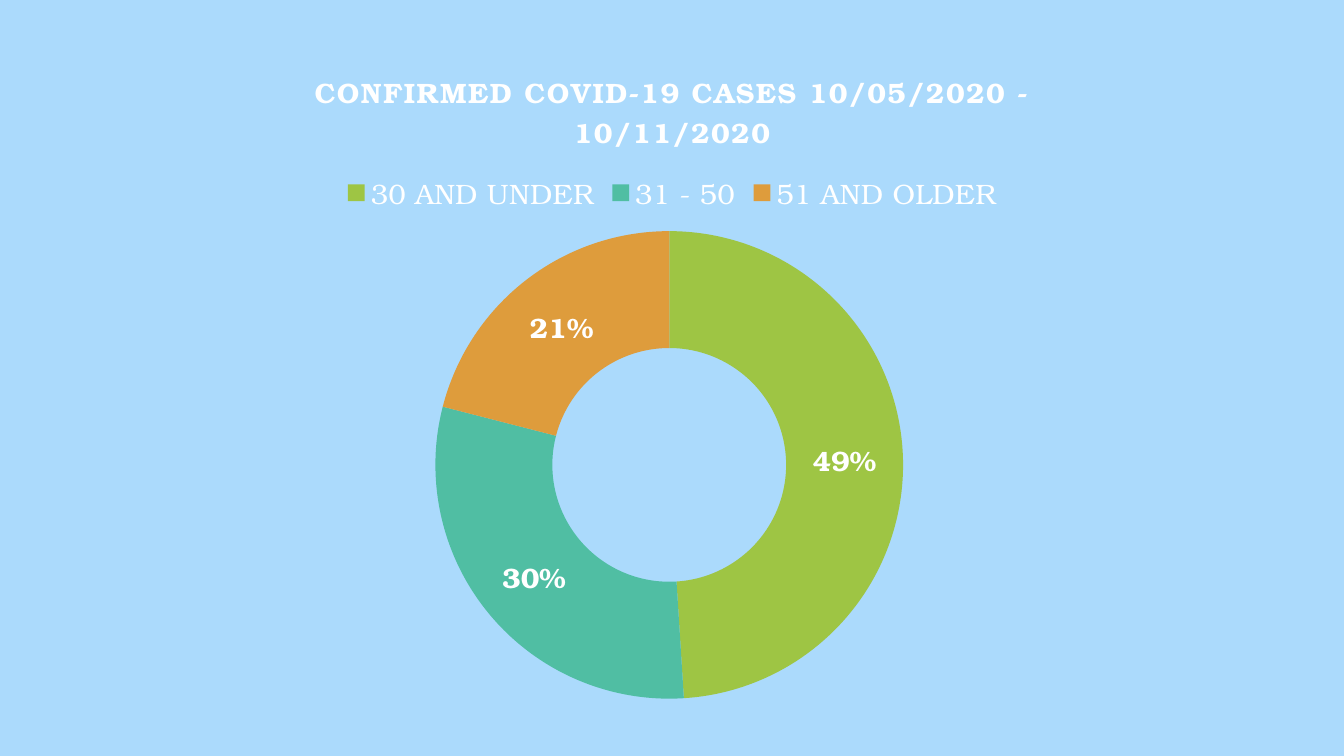
from pptx import Presentation
from pptx.chart.data import CategoryChartData
from pptx.dml.color import RGBColor
from pptx.enum.chart import XL_CHART_TYPE, XL_LEGEND_POSITION
from pptx.util import Inches, Pt

DONUT = XL_CHART_TYPE.DOUGHNUT
TOP = XL_LEGEND_POSITION.TOP
FACE = "TeX Gyre Bonum"
SKY = "ABDAFC"
WHITE = "FFFFFF"
TITLE = "CONFIRMED COVID-19 CASES 10/05/2020 - 10/11/2020"
CASES = {
    "30 AND UNDER": (49, "9EC544"),
    "31 - 50": (30, "50BEA3"),
    "51 AND OLDER": (21, "DE9C3C"),
}


def paint(fill, tone):
    """Give a fill one solid colour."""
    fill.solid()
    fill.fore_color.rgb = RGBColor.from_string(tone)


def style(item, form):
    """Set each attribute named in a dict of format values."""
    for name, value in form.items():
        setattr(item, name, value)


def set_font(font, size, bold=False):
    """Set the white face at a given size."""
    style(font, {"name": FACE, "size": Pt(size), "bold": bold})
    font.color.rgb = RGBColor.from_string(WHITE)


def add_title(chart):
    """Write the spaced bold title above the ring."""
    para = chart.chart_title.text_frame.paragraphs[0]
    run = para.add_run()
    run.text = TITLE
    set_font(run.font, 20, True)
    run.font._element.set("spc", "100")


def add_key(chart):
    """Place the legend between title and ring."""
    chart.has_legend = True
    style(chart.legend, {"position": TOP, "include_in_layout": False})
    set_font(chart.legend.font, 20)


def add_tags(plot):
    """Show each share as a percentage."""
    plot.has_data_labels = True
    tags = plot.data_labels
    style(tags, {"show_percentage": True, "show_value": False,
                 "number_format": "0%", "number_format_is_linked": False})
    set_font(tags.font, 20, True)


def add_ring(slide):
    """Add the doughnut chart of cases by age."""
    data = CategoryChartData()
    data.categories = list(CASES)
    data.add_series("Series 1", [count for count, tone in CASES.values()])
    frame = slide.shapes.add_chart(
        DONUT, Inches(1.9), Inches(0.43), Inches(9.53), Inches(6.64), data)
    chart = frame.chart
    set_font(chart.font, 10)
    add_title(chart)
    add_key(chart)
    plot = chart.plots[0]
    plot.vary_by_categories = True
    add_tags(plot)
    for index, (count, tone) in enumerate(CASES.values()):
        part = plot.series[0].points[index].format
        paint(part.fill, tone)
        part.line.fill.background()


def main():
    """Build and save the slide."""
    deck = Presentation()
    style(deck, {"slide_width": Inches(13.33), "slide_height": Inches(7.5)})
    slide = deck.slides.add_slide(deck.slide_layouts[6])
    paint(slide.background.fill, SKY)
    add_ring(slide)
    deck.save("out.pptx")


if __name__ == "__main__":
    main()
